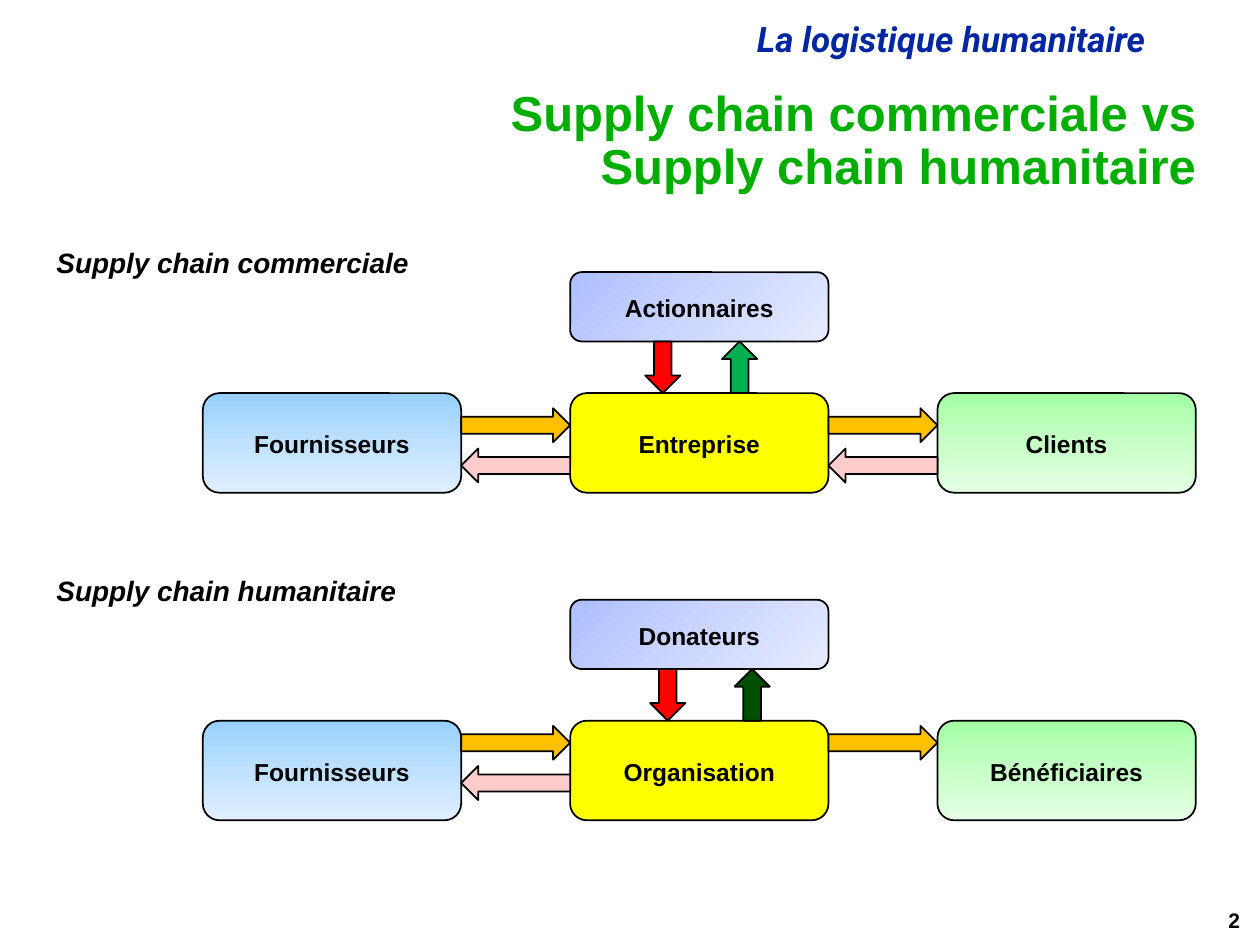
from copy import deepcopy
from dataclasses import dataclass

from pptx import Presentation
from pptx.dml.color import RGBColor
from pptx.enum.shapes import MSO_SHAPE
from pptx.enum.text import MSO_ANCHOR, PP_ALIGN
from pptx.util import Inches, Pt

ROUNDED = MSO_SHAPE.ROUNDED_RECTANGLE
DOWN, UP = MSO_SHAPE.DOWN_ARROW, MSO_SHAPE.UP_ARROW
RIGHT, LEFT = MSO_SHAPE.RIGHT_ARROW, MSO_SHAPE.LEFT_ARROW
MIDDLE, TOP = MSO_ANCHOR.MIDDLE, MSO_ANCHOR.TOP
ALIGN_LEFT, ALIGN_CENTER, ALIGN_RIGHT = PP_ALIGN.LEFT, PP_ALIGN.CENTER, PP_ALIGN.RIGHT

COLORS = {
    "black": "000000", "navy": "00279F", "title": "00AE00", "yellow": "FFFF00",
    "red": "FF0000", "green": "00B050", "dark green": "004E00",
    "orange": "FFC000", "pink": "FFCCCC",
}
# Three colours from start to end, then the counter-clockwise angle
GRADIENTS = {
    "funders": (("ACBEFF", "CCD6FF", "E6EBFF"), 315),
    "suppliers": (("96D0FF", "BFE1FF", "E0EFFF"), 270),
    "customers": (("A3FFA3", "C7FFC7", "E4FFE4"), 270),
}

# Grid in inches: three columns, with rows measured from the top of each chain
COLUMN_LEFT, COLUMN_STEP = 1.61, 2.915
BOX_WIDTH, FUNDER_HEIGHT, BOX_HEIGHT = 2.05, 0.55, 0.79
MAIN_ROW = 0.96
GAP_WIDTH = COLUMN_STEP - BOX_WIDTH
GAP_HEIGHT = MAIN_ROW - FUNDER_HEIGHT
FLOW_THICKNESS, FUNDING_THICKNESS = 0.27, 0.28
LANE_STEP = 0.32


@dataclass(frozen=True)
class Chain:
    heading: str
    heading_width: float
    top: float
    funders: str
    members: tuple[str, str, str]
    lane_offset: float              # first lane, below the top of the main row
    return_gaps: tuple[int, ...]    # gaps with an arrow back
    funding_lefts: tuple[float, float]
    return_color: str


CHAINS = (
    Chain("Supply chain commerciale", 3.03, 2.16, "Actionnaires",
          ("Fournisseurs", "Entreprise", "Clients"),
          0.12, (0, 1), (5.12, 5.73), "green"),
    Chain("Supply chain humanitaire", 2.93, 4.76, "Donateurs",
          ("Fournisseurs", "Organisation", "Bénéficiaires"),
          0.04, (0,), (5.16, 5.83), "dark green"),
)
MEMBER_FILLS = ("suppliers", "yellow", "customers")


def column(index: int) -> float:
    return COLUMN_LEFT + index * COLUMN_STEP


def write(box, text: str, *, size: float, color: str = "black", font: str = "Arial",
          italic: bool = False, align=ALIGN_LEFT, anchor=TOP,
          wrap: bool = True, spacing: float = 0.9, bottom: float = 0.05) -> None:
    frame = box.text_frame
    frame.word_wrap = wrap
    frame.vertical_anchor = anchor
    frame.margin_left = frame.margin_right = Inches(0.1)
    frame.margin_top, frame.margin_bottom = Inches(0.05), Inches(bottom)
    para = frame.paragraphs[0]
    para.alignment, para.line_spacing = align, spacing
    for number, line in enumerate(text.split("\n")):
        if number:
            para.add_line_break()
        span = para.add_run()
        span.text = line
        span.font.name, span.font.size = font, Pt(size)
        span.font.bold, span.font.italic = True, italic
        span.font.color.rgb = RGBColor.from_string(COLORS[color])


def add_text(page, area: tuple[float, float, float, float], text: str, **style) -> None:
    box = page.shapes.add_textbox(*map(Inches, area))
    write(box, text, **style)


def paint_gradient(shape, name: str) -> None:
    colors, angle = GRADIENTS[name]
    shape.fill.gradient()
    shape.fill.gradient_angle = angle
    first_stop = shape._element.xpath(".//a:gs")[0]
    first_stop.addnext(deepcopy(first_stop))
    for number, (stop, color) in enumerate(zip(shape.fill.gradient_stops, colors)):
        stop.position = number / 2
        stop.color.rgb = RGBColor.from_string(color)


def add_figure(page, kind, area: tuple[float, float, float, float], fill: str):
    shape = page.shapes.add_shape(kind, *map(Inches, area))
    shape.shadow.inherit = False
    if fill in GRADIENTS:
        paint_gradient(shape, fill)
    else:
        shape.fill.solid()
        shape.fill.fore_color.rgb = RGBColor.from_string(COLORS[fill])
    shape.line.color.rgb = RGBColor.from_string(COLORS["black"])
    shape.line.width = Pt(1)
    return shape


def add_actor(page, name: str, index: int, top: float, height: float, fill: str) -> None:
    box = add_figure(page, ROUNDED, (column(index), top, BOX_WIDTH, height), fill)
    write(box, name, size=14, align=ALIGN_CENTER, anchor=MIDDLE, wrap=False, bottom=0)


def add_flow(page, kind, gap: int, top: float, fill: str) -> None:
    left = column(gap) + BOX_WIDTH
    add_figure(page, kind, (left, top, GAP_WIDTH, FLOW_THICKNESS), fill)


def draw_chain(page, chain: Chain) -> None:
    main_top = chain.top + MAIN_ROW
    # Actors and heading
    add_actor(page, chain.funders, 1, chain.top, FUNDER_HEIGHT, "funders")
    for index, (name, fill) in enumerate(zip(chain.members, MEMBER_FILLS)):
        add_actor(page, name, index, main_top, BOX_HEIGHT, fill)
    add_text(page, (0.35, chain.top - 0.23, chain.heading_width, 0.34), chain.heading,
             size=16, italic=True, wrap=False)
    # Funding in and out
    funding = zip((DOWN, UP), chain.funding_lefts, ("red", chain.return_color))
    for kind, left, fill in funding:
        add_figure(page, kind, (left, chain.top + FUNDER_HEIGHT,
                                FUNDING_THICKNESS, GAP_HEIGHT), fill)
    # Flows between neighbours
    lane_top = main_top + chain.lane_offset
    for gap in range(len(chain.members) - 1):
        add_flow(page, RIGHT, gap, lane_top, "orange")
    for gap in chain.return_gaps:
        add_flow(page, LEFT, gap, lane_top + LANE_STEP, "pink")


def main() -> None:
    deck = Presentation()
    deck.slide_width, deck.slide_height = Inches(10), Inches(7.5)
    page = deck.slides.add_slide(deck.slide_layouts[6])

    # Header, title and page number
    add_text(page, (5.91, 0.13, 4.06, 0.4), "La logistique humanitaire",
             size=20, font="Roboto", color="navy", italic=True)
    add_text(page, (1.67, 0.68, 7.92, 0.9),
             "Supply chain commerciale vs\nSupply chain humanitaire",
             size=28, color="title", align=ALIGN_RIGHT, anchor=MIDDLE)
    add_text(page, (7.69, 7.1, 2.25, 0.4), "2",
             size=12, align=ALIGN_RIGHT, anchor=MIDDLE, spacing=1.0)

    for chain in CHAINS:
        draw_chain(page, chain)
    deck.save("out.pptx")


if __name__ == "__main__":
    main()
